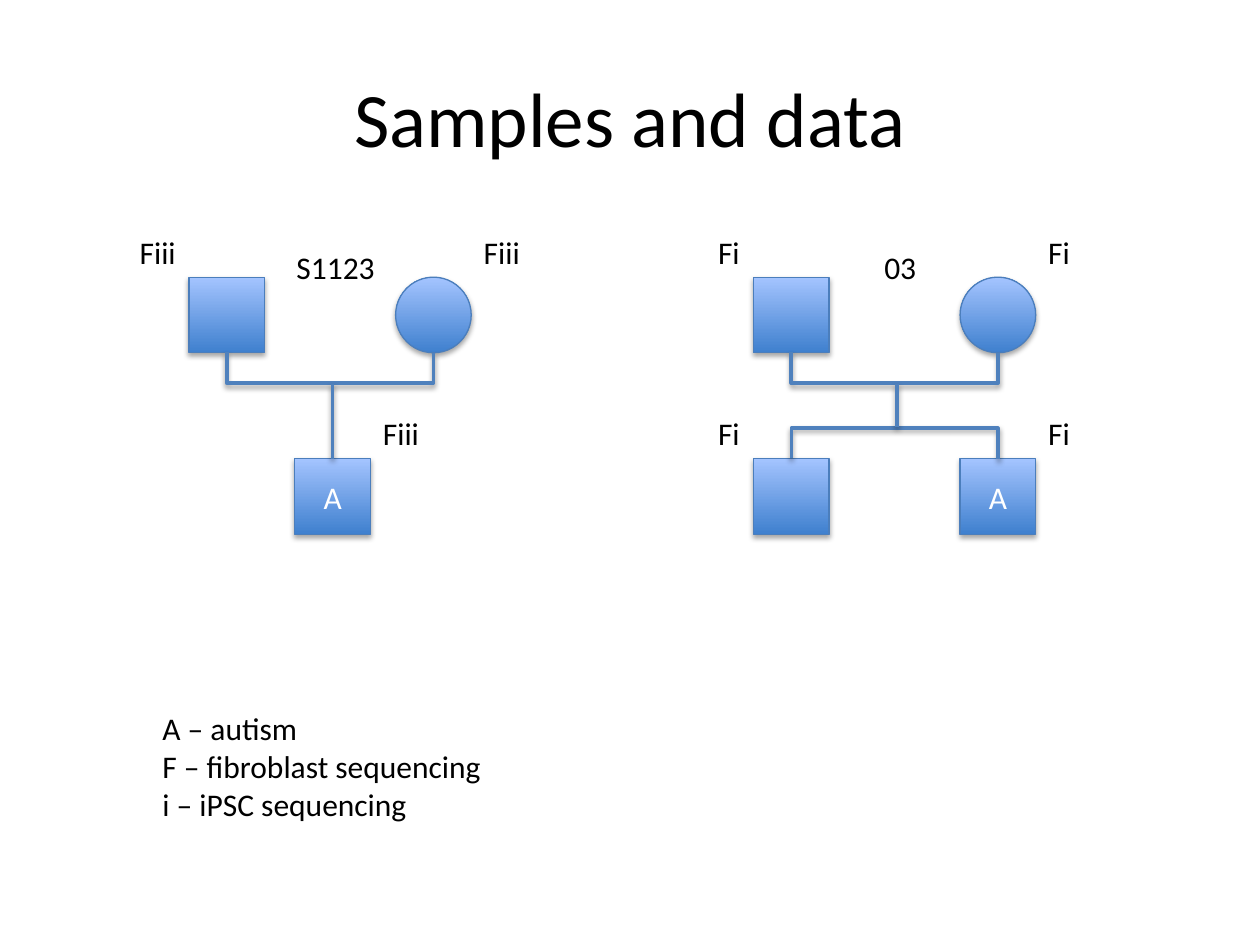
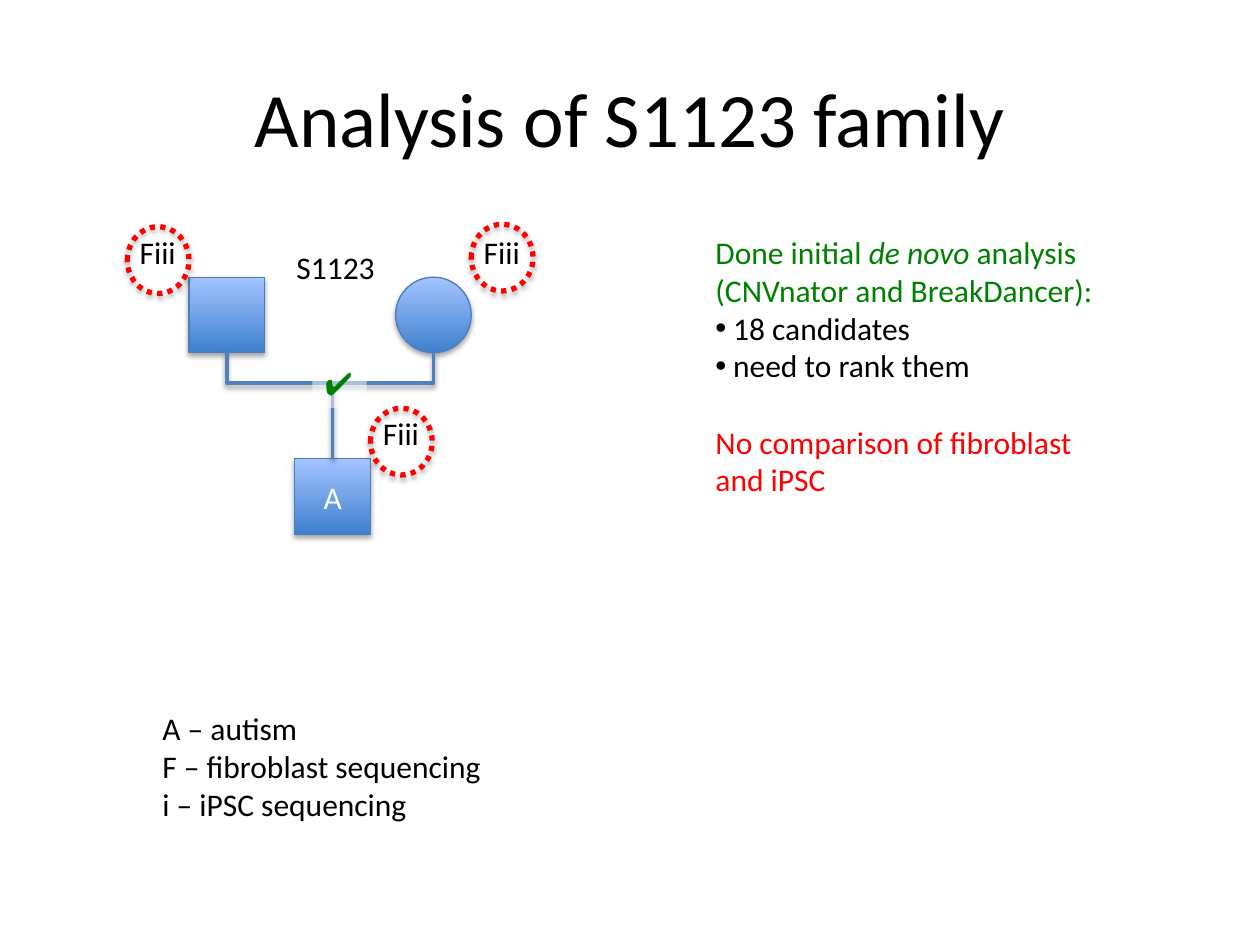
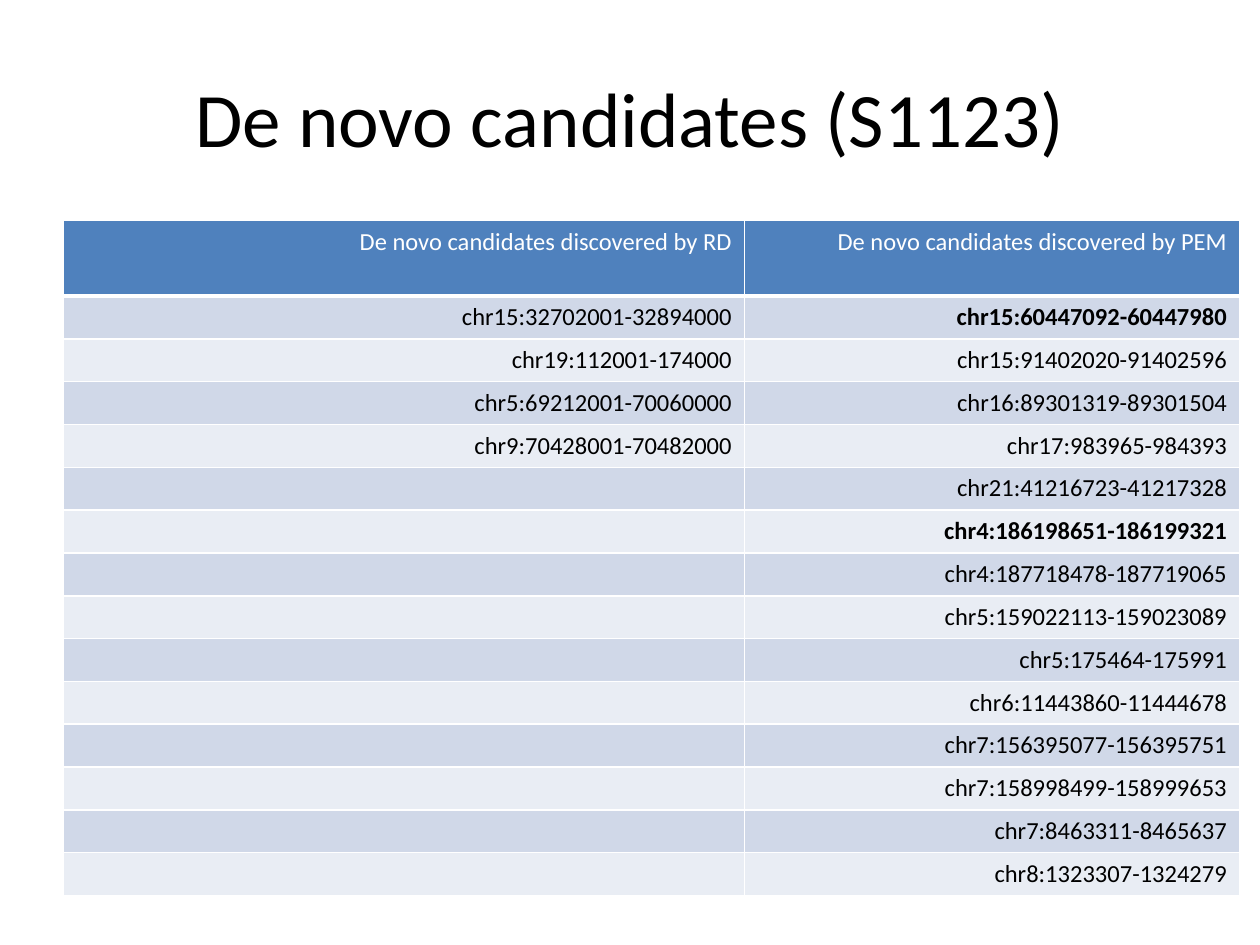
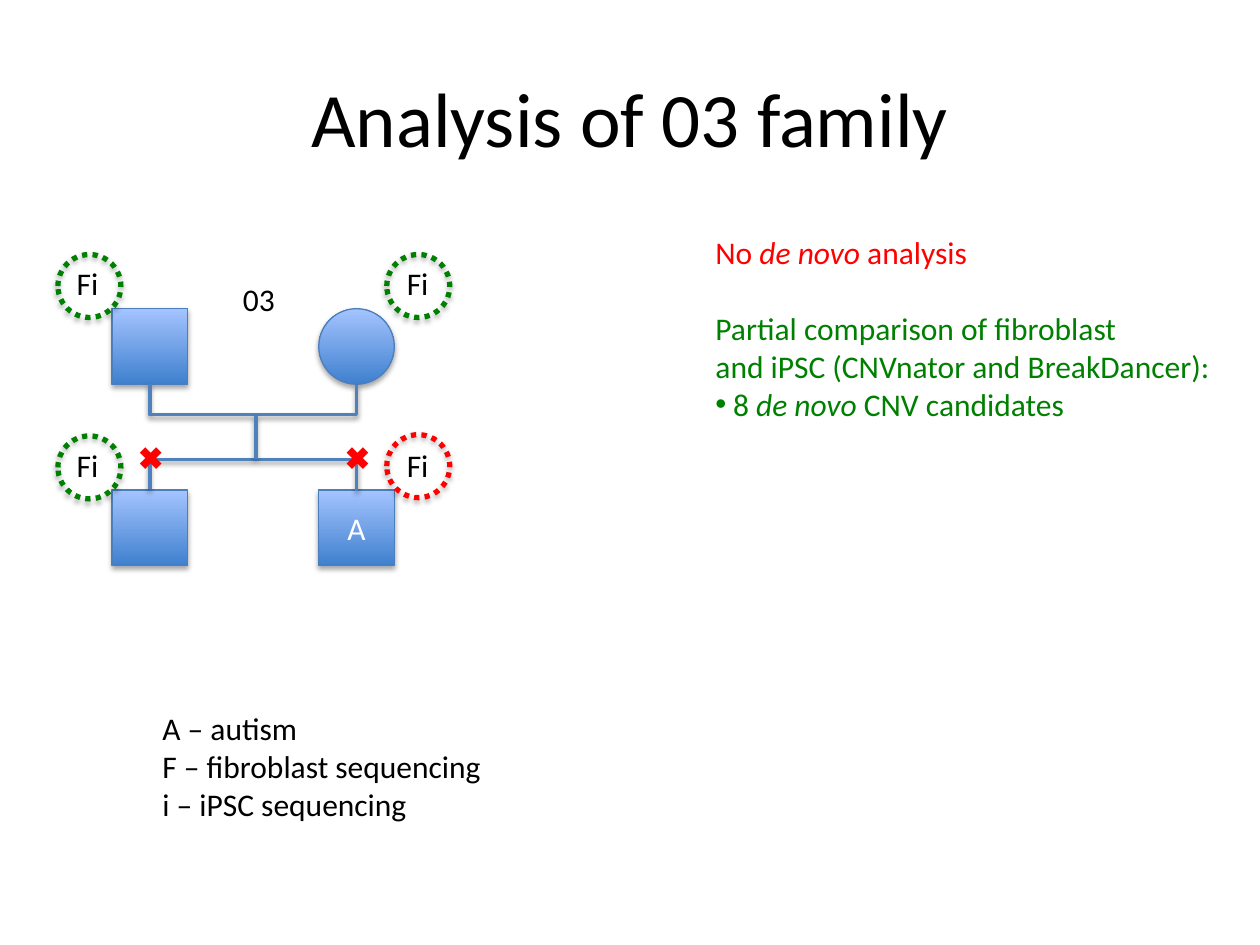
from lxml import etree
from pptx import Presentation
from pptx.dml.color import RGBColor
from pptx.enum.dml import MSO_LINE
from pptx.enum.shapes import MSO_CONNECTOR, MSO_SHAPE
from pptx.enum.text import MSO_ANCHOR, MSO_AUTO_SIZE, PP_ALIGN
from pptx.oxml.ns import qn
from pptx.util import Inches, Pt

RECT, OVAL = MSO_SHAPE.RECTANGLE, MSO_SHAPE.OVAL
ELBOW, STRAIGHT = MSO_CONNECTOR.ELBOW, MSO_CONNECTOR.STRAIGHT
LEFT, CENTER, RIGHT = PP_ALIGN.LEFT, PP_ALIGN.CENTER, PP_ALIGN.RIGHT
MIDDLE, GROW, DOTS = MSO_ANCHOR.MIDDLE, MSO_AUTO_SIZE.SHAPE_TO_FIT_TEXT, MSO_LINE.ROUND_DOT


class Theme:
    black, white = RGBColor(0, 0, 0), RGBColor(255, 255, 255)
    red, green = RGBColor(255, 0, 0), RGBColor(0, 128, 0)
    dark, light = RGBColor(0x3F, 0x80, 0xCE), RGBColor(0xA4, 0xC4, 0xFF)
    edge, line = RGBColor(0x4B, 0x7E, 0xBC), RGBColor(0x4F, 0x81, 0xBD)
    bands = RGBColor(0xE9, 0xED, 0xF4), RGBColor(0xD0, 0xD8, 0xE8)
    font, signs = "Calibri", "Arial"
    title, body, cell = Pt(44), Pt(18), Pt(14)


def write(frame, lines, size=Theme.body, font=Theme.font, align=LEFT, wrap=False):
    """Fill a frame with (text, colour, space before); *stars* mark italics."""
    frame.word_wrap = wrap
    if not wrap:
        frame.auto_size = GROW
    for i, (text, color, gap) in enumerate(lines):
        para = frame.paragraphs[0] if i == 0 else frame.add_paragraph()
        para.alignment = align
        if gap:
            para.space_before = Pt(gap)
        if text.startswith("• "):
            text = text[2:]
            props = para._p.get_or_add_pPr()
            props.set("marL", str(Inches(0.14)))
            props.set("indent", str(-Inches(0.14)))
            etree.SubElement(props, qn("a:buFont"), typeface="Arial")
            etree.SubElement(props, qn("a:buChar"), char="•")
        para.font.size, para.font.name = size, font
        para.font.color.rgb = color
        for j, part in enumerate(text.split("*")):
            run = para.add_run()
            run.text = part
            if j % 2:
                run.font.italic = True


def shade(shape, color, width, alpha=35, dist=1.8):
    """Set the outline, then a soft shadow below the shape."""
    shape.line.color.rgb = color
    shape.line.width = Pt(width)
    effects = etree.SubElement(shape._element.spPr, qn("a:effectLst"))
    outer = etree.SubElement(effects, qn("a:outerShdw"), blurRad=str(Pt(3.1)),
                             dist=str(Pt(dist)), dir="5400000", rotWithShape="0")
    tint = etree.SubElement(outer, qn("a:srgbClr"), val="000000")
    etree.SubElement(tint, qn("a:alpha"), val=str(alpha * 1000))


deck = Presentation()
deck.slide_width, deck.slide_height = Inches(10), Inches(7.5)

# Slides and titles
slides = []
for title in ("Samples and data", "Analysis of S1123 family",
              "De novo candidates (S1123)", "Analysis of 03 family"):
    slide = deck.slides.add_slide(deck.slide_layouts[6])
    frame = slide.shapes.add_textbox(Inches(0.5), Inches(0.3), Inches(9), Inches(1.25)).text_frame
    frame.vertical_anchor = MIDDLE
    write(frame, [(title, Theme.black, 0)], Theme.title, align=CENTER, wrap=True)
    slides.append(slide)
first, trio, calls, quad = slides

# Family trees: slide, left, top, name and its width, label and its width, child offsets
SIDE, SPAN, DROP, THIN = 0.6, 1.64, 0.25, 0.01
one = ("S1123", 0.83, "Fiii", 0.49, [0.84])
two = ("03", 0.46, "Fi", 0.38, [0, SPAN])
for slide, x, y, (name, wide, label, room, kids) in (
        (first, 1.5, 2.2, one), (first, 5.98, 2.2, two),
        (trio, 1.5, 2.2, one), (quad, 0.89, 2.45, two)):
    shapes = slide.shapes
    low = y + 1.44
    people = [(RECT, 0, y), (OVAL, SPAN, y)] + [(RECT, kid, low) for kid in kids]
    notes = [(name, x + 1.17 - wide / 2, y - 0.28, wide)]
    for kind, off, top in people:
        person = shapes.add_shape(kind, Inches(x + off), Inches(top), Inches(SIDE), Inches(SIDE))
        person.fill.gradient()
        person.fill.gradient_angle = 90
        for stop, color in zip(person.fill.gradient_stops, (Theme.dark, Theme.light)):
            stop.color.rgb = color
        shade(person, Theme.edge, 0.75)
        notes.append((label, x + off + SIDE if off else x - room, top - 0.4, room))
    person.text_frame.vertical_anchor = MIDDLE
    write(person.text_frame, [("A", Theme.white, 0)], align=CENTER, wrap=True)

    # Brackets: a thin elbow turned on its side, bending down (1) or up (-1)
    mid = x + (SPAN + SIDE) / 2
    for level, way in [(y + SIDE, 1), (low, -1)][:len(kids)]:
        dx, dy = way * THIN / 2, way * SPAN / 2
        bar = shapes.add_connector(ELBOW, Inches(mid + dx), Inches(level - dy),
                                   Inches(mid - dx), Inches(level + dy))
        bar.rotation = 270
        guides = bar._element.spPr.find(qn("a:prstGeom")).get_or_add_avLst()
        etree.SubElement(guides, qn("a:gd"), name="adj1",
                         fmla=f"val {round(DROP / THIN * 100000)}")
        shade(bar, Theme.line, 2, 38, 1.6)
    foot = low if len(kids) == 1 else low - DROP
    stem = shapes.add_connector(STRAIGHT, Inches(mid + 0.02), Inches(foot),
                                Inches(mid + 0.02), Inches(y + SIDE + DROP))
    shade(stem, Theme.line, 2, 38, 1.6)
    for text, left, top, width in notes:
        box = shapes.add_textbox(Inches(left), Inches(top), Inches(width), Inches(0.4))
        write(box.text_frame, [(text, Theme.black, 0)])

# Legend
for slide in (first, trio, quad):
    box = slide.shapes.add_textbox(Inches(1.19), Inches(5.58), Inches(2.75), Inches(1.01))
    write(box.text_frame, [(text, Theme.black, 0) for text in (
        "A – autism", "F – fibroblast sequencing", "i – iPSC sequencing")])

# Findings
for slide, width, height, lines in (
        (trio, 3.22, 2.22, [
            ("Done initial *de novo* analysis", Theme.green, 0),
            ("(CNVnator and BreakDancer):", Theme.green, 0),
            ("• 18 candidates", Theme.black, 0),
            ("• need to rank them", Theme.black, 0),
            ("No comparison of fibroblast", Theme.red, 22),
            ("and iPSC", Theme.red, 0)]),
        (quad, 4.16, 1.62, [
            ("No *de novo* analysis", Theme.red, 0),
            ("Partial comparison of fibroblast", Theme.green, 22),
            ("and iPSC (CNVnator and BreakDancer):", Theme.green, 0),
            ("• 8 *de novo* CNV candidates", Theme.green, 0)])):
    box = slide.shapes.add_textbox(Inches(5.58), Inches(1.8), Inches(width), Inches(height))
    write(box.text_frame, lines)

# Dotted rings around the labels
for slide, width, height, color, spots in (
        (trio, 0.49, 0.53, Theme.red, [(3.74, 1.78), (2.94, 3.24), (1.01, 1.8)]),
        (quad, 0.5, 0.5, Theme.green, [(3.07, 2.02), (0.46, 3.46), (0.46, 2.02)]),
        (quad, 0.5, 0.5, Theme.red, [(3.07, 3.45)])):
    for left, top in spots:
        ring = slide.shapes.add_shape(OVAL, Inches(left), Inches(top), Inches(width), Inches(height))
        ring.fill.background()
        shade(ring, color, 3)
        ring.line.dash_style = DOTS

# Check and cross marks
for slide, sign, color, left, top, width in (
        (trio, "✔", Theme.green, 2.48, 2.84, 0.43),
        (quad, "✖", Theme.red, 2.64, 3.43, 0.41),
        (quad, "✖", Theme.red, 1, 3.43, 0.41)):
    mark = slide.shapes.add_textbox(Inches(left), Inches(top), Inches(width), Inches(0.4))
    write(mark.text_frame, [(sign, color, 0)], font=Theme.signs)
    if slide is trio:
        mark.fill.solid()
        mark.fill.fore_color.rgb = Theme.white
        tint = mark._element.spPr.find(qn("a:solidFill"))[0]
        etree.SubElement(tint, qn("a:alpha"), val="50000")

# Candidate table
depth = ["De novo candidates discovered by RD", "chr15:32702001-32894000",
         "chr19:112001-174000", "chr5:69212001-70060000", "chr9:70428001-70482000"]
pairs = ["De novo candidates discovered by PEM", "chr15:60447092-60447980",
         "chr15:91402020-91402596", "chr16:89301319-89301504", "chr17:983965-984393",
         "chr21:41216723-41217328", "chr4:186198651-186199321", "chr4:187718478-187719065",
         "chr5:159022113-159023089", "chr5:175464-175991", "chr6:11443860-11444678",
         "chr7:156395077-156395751", "chr7:158998499-158999653", "chr7:8463311-8465637",
         "chr8:1323307-1324279"]
strong = {pairs[1], pairs[6]}
depth += [""] * (len(pairs) - len(depth))
table = calls.shapes.add_table(len(pairs), 2, Inches(0.5), Inches(1.75),
                               Inches(9.34), Inches(5.43)).table
table.columns[0].width, table.columns[1].width = Inches(5.41), Inches(3.93)
for r, texts in enumerate(zip(depth, pairs)):
    table.rows[r].height = Inches(0.34 if r else 0.6)
    for c, text in enumerate(texts):
        cell = table.cell(r, c)
        for side in "LRTB":
            width = 3 if r == 0 and side == "B" else 1
            rule = etree.SubElement(cell._tc.get_or_add_tcPr(), qn("a:ln" + side), w=str(Pt(width)))
            fill = etree.SubElement(rule, qn("a:solidFill"))
            etree.SubElement(fill, qn("a:srgbClr"), val=str(Theme.white))
        cell.fill.solid()
        cell.fill.fore_color.rgb = Theme.bands[r % 2] if r else Theme.line
        para = cell.text_frame.paragraphs[0]
        para.alignment = RIGHT
        para.font.size, para.font.name = Theme.cell, Theme.font
        para.font.bold = text in strong
        para.font.color.rgb = Theme.black if r else Theme.white
        if text:
            para.add_run().text = text
        else:
            etree.SubElement(para._p, qn("a:endParaRPr"), sz=str(int(Theme.cell.pt * 100)))

deck.save("out.pptx")
